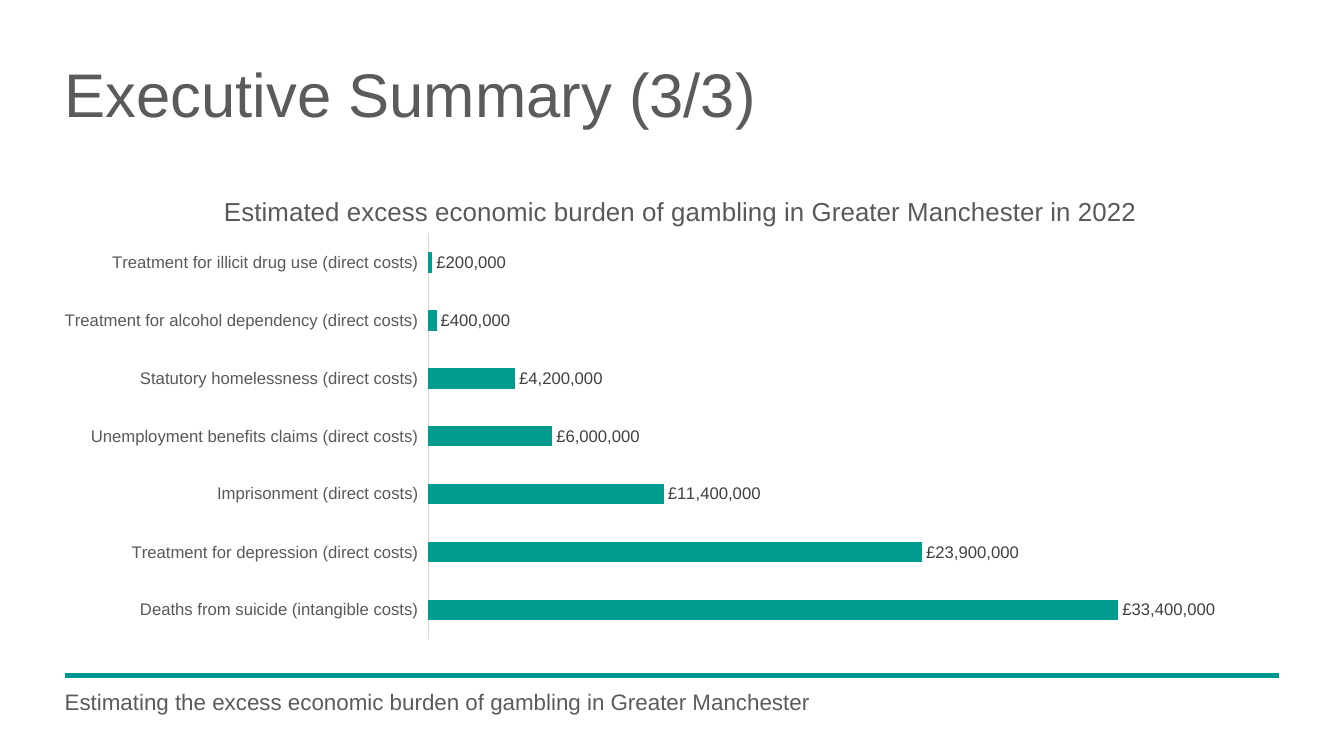
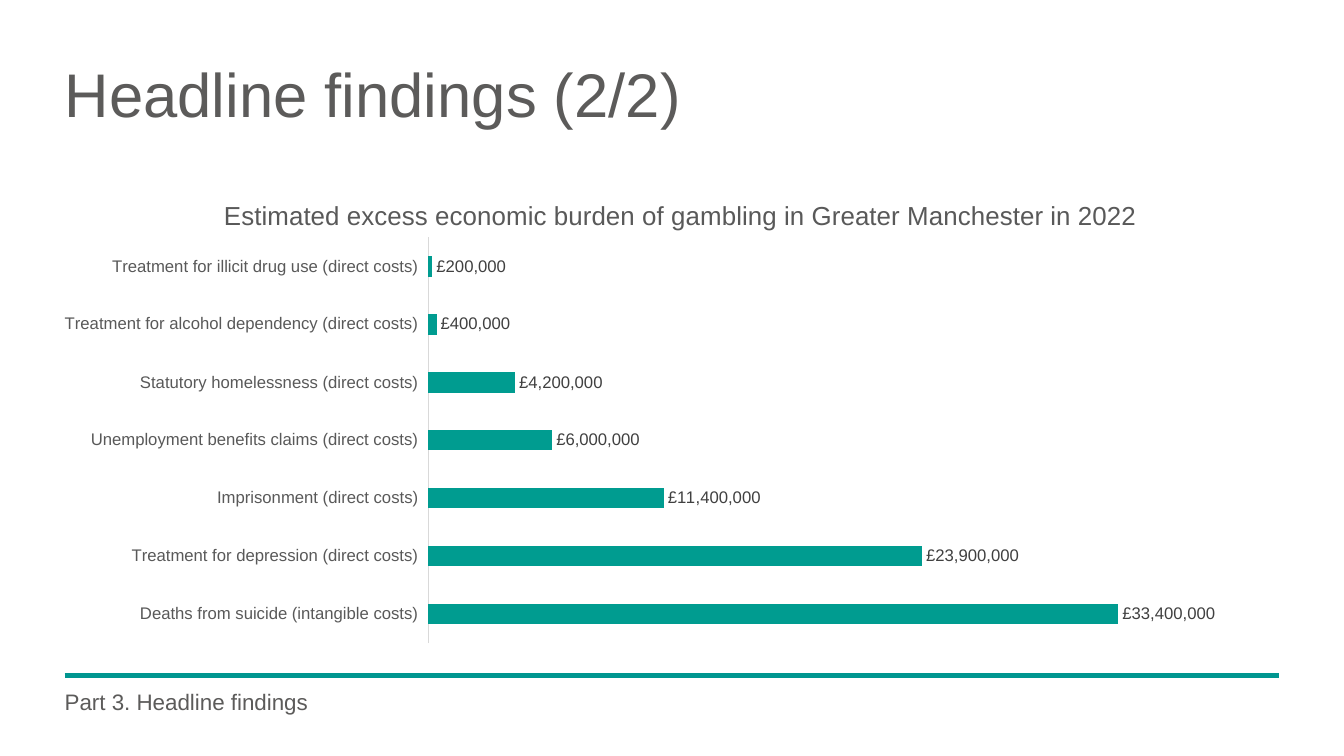
from lxml import etree
from pptx import Presentation
from pptx.chart.data import CategoryChartData
from pptx.dml.color import RGBColor
from pptx.enum.chart import XL_CHART_TYPE, XL_LABEL_POSITION, XL_TICK_LABEL_POSITION, XL_TICK_MARK
from pptx.enum.shapes import MSO_CONNECTOR
from pptx.enum.text import MSO_ANCHOR, MSO_AUTO_SIZE, PP_ALIGN
from pptx.oxml.ns import qn
from pptx.util import Cm, Pt

BAR_CLUSTERED = XL_CHART_TYPE.BAR_CLUSTERED
OUTSIDE_END = XL_LABEL_POSITION.OUTSIDE_END
LABELS_LOW = XL_TICK_LABEL_POSITION.LOW
NO_TICK = XL_TICK_MARK.NONE
STRAIGHT = MSO_CONNECTOR.STRAIGHT
TOP = MSO_ANCHOR.TOP
NO_AUTOFIT = MSO_AUTO_SIZE.NONE
LEFT = PP_ALIGN.LEFT

FONT = "Arial"
COLORS = {
    "text": "5C5B5A",
    "rule": "009690",
    "bar": "009C90",
    "axis_text": "595959",
    "axis_line": "D9D9D9",
    "label": "404040",
}
MARGIN = 1.63
CONTENT_WIDTH = 30.61
RULE_TOP = 17.02
CHART_HEIGHT = 12.09

CHART_TITLE = "Estimated excess economic burden of gambling in Greater Manchester in 2022"
COSTS = {
    "Deaths from suicide (intangible costs)": 33400000,
    "Treatment for depression (direct costs)": 23900000,
    "Imprisonment (direct costs)": 11400000,
    "Unemployment benefits claims (direct costs)": 6000000,
    "Statutory homelessness (direct costs)": 4200000,
    "Treatment for alcohol dependency (direct costs)": 400000,
    "Treatment for illicit drug use (direct costs)": 200000,
}
SLIDES = [
    ("Executive Summary (3/3)", "Estimating the excess economic burden of gambling in Greater Manchester", 4.27),
    ("Headline findings (2/2)", "Part 3. Headline findings", 4.37),
]


def style_font(font, size, color):
    font.name = FONT
    font.size = Pt(size)
    font.bold = False
    font.color.rgb = RGBColor.from_string(COLORS[color])


def place_in_chart(element, index, **lengths):
    for old_layout in element.findall(qn("c:layout")):
        element.remove(old_layout)
    layout_element = etree.Element(qn("c:layout"))
    manual = etree.SubElement(layout_element, qn("c:manualLayout"))
    if "w" in lengths:
        etree.SubElement(manual, qn("c:layoutTarget")).set("val", "inner")
    for mode in ("xMode", "yMode"):
        etree.SubElement(manual, qn(f"c:{mode}")).set("val", "edge")
    for name, length in lengths.items():
        whole = CONTENT_WIDTH if name in "xw" else CHART_HEIGHT
        etree.SubElement(manual, qn(f"c:{name}")).set("val", str(length / whole))
    element.insert(index, layout_element)


presentation = Presentation()
presentation.slide_width = Cm(33.87)
presentation.slide_height = Cm(19.05)

layout = presentation.slide_layouts[1]
for placeholder, (top, height) in zip(layout.placeholders, [(1.63, 2.57), (17.42, 1.07)]):
    placeholder.left, placeholder.top = Cm(MARGIN), Cm(top)
    placeholder.width, placeholder.height = Cm(CONTENT_WIDTH), Cm(height)

chart_data = CategoryChartData(number_format='"£"#,##0')
chart_data.categories = list(COSTS)
chart_data.add_series("Series 1", list(COSTS.values()))

for number, (title, footer, chart_top) in enumerate(SLIDES):
    slide = presentation.slides.add_slide(layout)

    if number == 0:
        rule = slide.shapes.add_connector(
            STRAIGHT, Cm(MARGIN), Cm(RULE_TOP), Cm(MARGIN + CONTENT_WIDTH), Cm(RULE_TOP)
        )
        rule.line.color.rgb = RGBColor.from_string(COLORS["rule"])
        rule.line.width = Pt(3)
        etree.SubElement(rule.element.spPr, qn("a:effectLst"))
        layout.shapes.element.append(rule.element)

    texts = [(title, 44, 0, 0), (footer, 16, 10, 0.13)]
    for shape, (text, size, space_before, inset_bottom) in zip(slide.placeholders, texts):
        text_frame = shape.text_frame
        text_frame.text = text
        text_frame.word_wrap = True
        text_frame.auto_size = NO_AUTOFIT
        text_frame.vertical_anchor = TOP
        text_frame.margin_left = text_frame.margin_top = text_frame.margin_right = 0
        text_frame.margin_bottom = Cm(inset_bottom)
        paragraph = text_frame.paragraphs[0]
        paragraph.alignment = LEFT
        paragraph.line_spacing = 0.9
        paragraph.space_before = Pt(space_before)
        style_font(paragraph.runs[0].font, size, "text")
        properties = paragraph._p.get_or_add_pPr()
        properties.set("marL", "0")
        properties.set("indent", "0")
        etree.SubElement(properties, qn("a:buNone"))

    chart = slide.shapes.add_chart(
        BAR_CLUSTERED, Cm(MARGIN), Cm(chart_top), Cm(CONTENT_WIDTH), Cm(CHART_HEIGHT), chart_data
    ).chart
    chart.has_legend = False
    chart.font.name = FONT
    chart.font.size = Pt(10)

    chart.has_title = True
    title_frame = chart.chart_title.text_frame
    title_frame.text = CHART_TITLE
    style_font(title_frame.paragraphs[0].runs[0].font, 18.6, "axis_text")
    place_in_chart(title_frame._txBody.getparent().getparent(), 1, x=3.75, y=0.5)
    plot_area = chart.element.find(qn("c:chart")).find(qn("c:plotArea"))
    place_in_chart(plot_area, 0, x=9.05, y=1.61, w=20.94, h=10.23)

    category_axis = chart.category_axis
    category_axis.major_tick_mark = category_axis.minor_tick_mark = NO_TICK
    category_axis.tick_label_position = LABELS_LOW
    category_axis.format.line.color.rgb = RGBColor.from_string(COLORS["axis_line"])
    category_axis.format.line.width = Pt(0.75)
    style_font(category_axis.tick_labels.font, 12, "axis_text")

    value_axis = chart.value_axis
    value_axis.minimum_scale = 0
    value_axis.maximum_scale = 40000000
    value_axis.has_major_gridlines = False
    value_axis.tick_labels.number_format = '"£"#,##0.00'
    value_axis.tick_labels.number_format_is_linked = False
    value_axis.visible = False

    plot = chart.plots[0]
    plot.gap_width = 182
    plot.vary_by_categories = False
    series = plot.series[0]
    series.format.fill.solid()
    series.format.fill.fore_color.rgb = RGBColor.from_string(COLORS["bar"])
    labels = series.data_labels
    labels.show_value = True
    labels.number_format = '"£"#,##0'
    labels.number_format_is_linked = False
    labels.position = OUTSIDE_END
    style_font(labels.font, 12, "label")

presentation.save("out.pptx")
